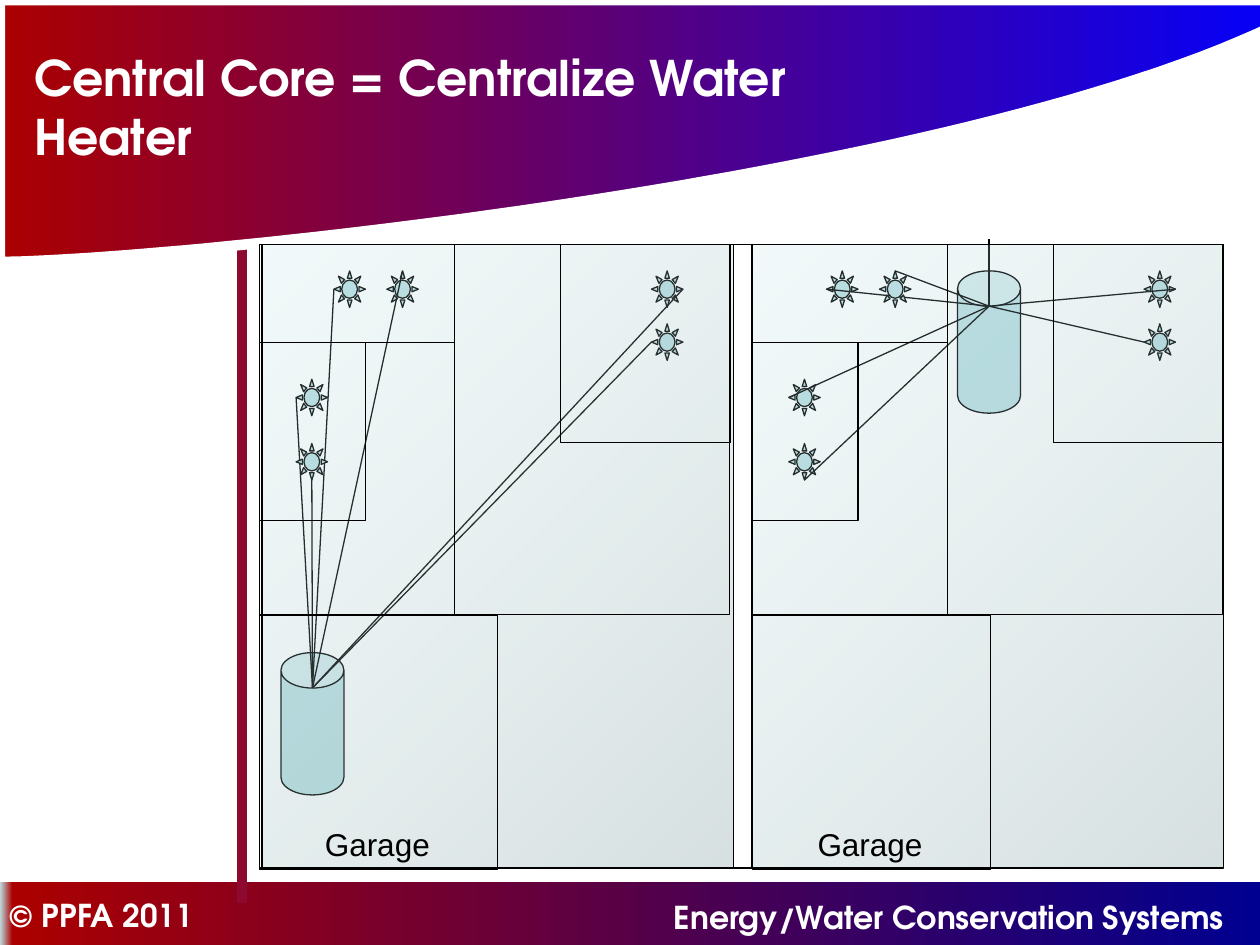
"""Build a slide comparing corner and central water heater layouts in two floor plans."""
from typing import NamedTuple, Optional

from lxml import etree
from pptx import Presentation
from pptx import util as u
from pptx.dml import color
from pptx.enum import shapes, text
from pptx.oxml import ns

COLORS = {
    "ink": "000000", "paper": "FFFFFF", "water": "BBE0E3", "shade": "86A0A2",
    "red": "AB0000", "blue": "0000FF", "navy": "000090", "wine": "8E0930",
}
FONTS = {"display": "TeX Gyre Adventor", "label": "Arial"}
CELL = u.Inches(0.1)
TOP, LEFT, BOTTOM, RIGHT = range(4)


class Box(NamedTuple):
    """Rectangle in grid columns and rows."""
    column: float
    row: float
    columns: float
    rows: float

    def shifted(self, column: float, row: float) -> "Box":
        """Return the box moved by columns and rows."""
        return self._replace(column=self.column + column, row=self.row + row)


class Stop(NamedTuple):
    """Gradient stop in percent, with opacity in percent."""
    position: int
    color: str
    opacity: int = 100


class Fixture(NamedTuple):
    """Water outlet and the side where its pipe starts."""
    column: float
    row: float
    side: int


class House(NamedTuple):
    """Floor plan origin, heater place and backdrop inset."""
    column: float
    heater_column: float
    heater_row: float
    inset: float
    frame: Optional[Box] = None


HOUSE_ROW = 19.4
FLOOR = Box(0, 0, 37.4, 49.5)
ROOMS = (
    Box(0, 29.4, 18.9, 20.2),
    Box(0, 0, 15.5, 7.8),
    Box(0, 7.8, 8.4, 14.1),
    Box(15.5, 0, 21.8, 29.4),
    Box(23.9, 0, 13.5, 15.7),
)
FIXTURES = (
    Fixture(5.9, 2.1, LEFT), Fixture(31.1, 2.1, RIGHT), Fixture(2.9, 10.7, LEFT),
    Fixture(10.1, 2.1, TOP), Fixture(31.1, 6.3, LEFT), Fixture(2.9, 15.8, BOTTOM),
)
HOUSES = (
    House(59.7, 16.3, 2.1, 0),
    House(20.6, 1.7, 32.4, 0.2, Box(0, 0, 39.1, 49.5)),
)


def grid(*cells: float) -> list[int]:
    """Convert grid cells to lengths."""
    return [u.Emu(round(cell * CELL)) for cell in cells]


def rgb(name: str) -> color.RGBColor:
    """Look up a named colour."""
    return color.RGBColor.from_string(COLORS[name])


def fill_gradient(shape, stops: tuple[Stop, ...], angle: int) -> None:
    """Fill a shape with a linear gradient."""
    shape.fill.gradient()
    gradient = shape._element.spPr.find(ns.qn("a:gradFill"))
    gradient.find(ns.qn("a:lin")).set("ang", str(angle * 60000))
    stop_list = gradient.find(ns.qn("a:gsLst"))
    for old_stop in list(stop_list):
        stop_list.remove(old_stop)
    for stop in stops:
        entry = etree.SubElement(stop_list, ns.qn("a:gs"), pos=str(stop.position * 1000))
        tint = etree.SubElement(entry, ns.qn("a:srgbClr"), val=COLORS[stop.color])
        if stop.opacity < 100:
            etree.SubElement(tint, ns.qn("a:alpha"), val=str(stop.opacity * 1000))


def add_shape(slide, kind, box: Box, fill: Optional[str] = None, adjustment: Optional[float] = None):
    """Add an outlined shape, filled or hollow."""
    shape = slide.shapes.add_shape(kind, *grid(*box))
    shape.shadow.inherit = False
    if fill:
        shape.fill.solid()
        shape.fill.fore_color.rgb = rgb(fill)
    else:
        shape.fill.background()
    shape.line.color.rgb = rgb("ink")
    shape.line.width = u.Pt(0.75)
    if adjustment is not None:
        shape.adjustments[0] = adjustment
    return shape


def add_line(slide, start: tuple, end: tuple, line_color: str = "ink", width: float = 0.75):
    """Add a straight connector between two grid points."""
    line = slide.shapes.add_connector(shapes.MSO_CONNECTOR.STRAIGHT, *grid(*start, *end))
    line.line.color.rgb = rgb(line_color)
    line.line.width = u.Pt(width)
    etree.SubElement(line._element.spPr, ns.qn("a:effectLst"))
    return line


def write(shape, words: str, size: float, font: str, font_color: str, bold: bool, wrap: bool) -> None:
    """Put one formatted, left-aligned paragraph into a shape."""
    frame = shape.text_frame
    frame.text = words
    frame.word_wrap = wrap
    frame.auto_size = text.MSO_AUTO_SIZE.NONE
    frame.vertical_anchor = text.MSO_ANCHOR.TOP
    paragraph = frame.paragraphs[0]
    paragraph.alignment = text.PP_ALIGN.LEFT
    for run in paragraph.runs:
        run.font.size = u.Pt(size)
        run.font.name = FONTS[font]
        run.font.bold = bold
        run.font.color.rgb = rgb(font_color)


def add_footer(slide) -> None:
    """Draw the footer band, its captions and the side bar."""
    band = add_shape(slide, shapes.MSO_SHAPE.RECTANGLE, Box(0, 70, 100, 5))
    band.line.fill.background()
    fill_gradient(band, (Stop(0, "water"), Stop(1, "red"), Stop(100, "navy")), 0)
    add_line(slide, (19.2, 71.7), (19.2, 15.8), "wine", 6)
    for words, box in (
        ("Energy/Water Conservation Systems", Box(52.5, 70.8, 47.5, 4.2)),
        ("© PPFA 2011", Box(-0.2, 70.6, 18.9, 4.2)),
    ):
        write(slide.shapes.add_textbox(*grid(*box)), words, 18, "display", "paper", True, True)


def add_header(slide) -> None:
    """Draw the curved header and place the title on it."""
    controls = ((0, 20.8), (15.3, 20.6), (82, 13.7), (105, 0))
    steps = 60
    curve = []
    for step in range(steps + 1):
        t = step / steps
        weights = ((1 - t) ** 3, 3 * t * (1 - t) ** 2, 3 * t ** 2 * (1 - t), t ** 3)
        curve.append(tuple(sum(w * p[axis] for w, p in zip(weights, controls)) for axis in (0, 1)))
    builder = slide.shapes.build_freeform(0, 0, scale=CELL / 100)
    builder.add_line_segments([(round(x * 100), round(y * 100)) for x, y in curve], close=True)
    header = builder.convert_to_shape()
    header.shadow.inherit = False
    fill_gradient(header, (Stop(0, "red"), Stop(99, "blue"), Stop(100, "paper")), 0)
    header.line.color.rgb = rgb("paper")
    header.line.width = u.Pt(6)
    title = slide.shapes.title
    title.left, title.top, title.width, title.height = grid(1.7, 3.3, 70, 7.5)
    write(title, "Central Core = Centralize Water Heater", 28, "display", "paper", True, True)
    header._element.addnext(title._element)


def add_house(slide, house: House) -> None:
    """Draw one floor plan with its heater, outlets, pipes and rooms."""
    origin = (house.column, HOUSE_ROW)
    heater = Box(house.heater_column, house.heater_row, 5, 11.3).shifted(*origin)
    add_shape(slide, shapes.MSO_SHAPE.CAN, heater, "water", 0.563)
    middle = heater.column + heater.columns / 2
    outlet = (middle, heater.row + 2.8)
    add_line(slide, outlet, (middle, heater.row - 2.5))
    for fixture in FIXTURES:
        box = Box(fixture.column, fixture.row, 2.5, 2.9).shifted(*origin)
        sun = add_shape(slide, shapes.MSO_SHAPE.SUN, box, "water", 0.25)
        add_line(slide, box[:2], outlet).begin_connect(sun, fixture.side)
    floor = add_shape(slide, shapes.MSO_SHAPE.RECTANGLE, FLOOR.shifted(*origin).shifted(house.inset, 0))
    fill_gradient(floor, (Stop(0, "water", 19), Stop(100, "shade", 33)), 45)
    for room in ROOMS + ((house.frame,) if house.frame else ()):
        add_shape(slide, shapes.MSO_SHAPE.RECTANGLE, room.shifted(*origin))
    label = slide.shapes.add_textbox(*grid(*Box(4.2, 45.6, 10.3, 4).shifted(*origin)))
    write(label, "Garage", 18, "label", "ink", False, False)


def main() -> None:
    """Build and save the slide."""
    presentation = Presentation()
    presentation.slide_width, presentation.slide_height = grid(100, 75)
    slide = presentation.slides.add_slide(presentation.slide_layouts[5])
    add_footer(slide)
    add_header(slide)
    for house in HOUSES:
        add_house(slide, house)
    presentation.save("out.pptx")


if __name__ == "__main__":
    main()
